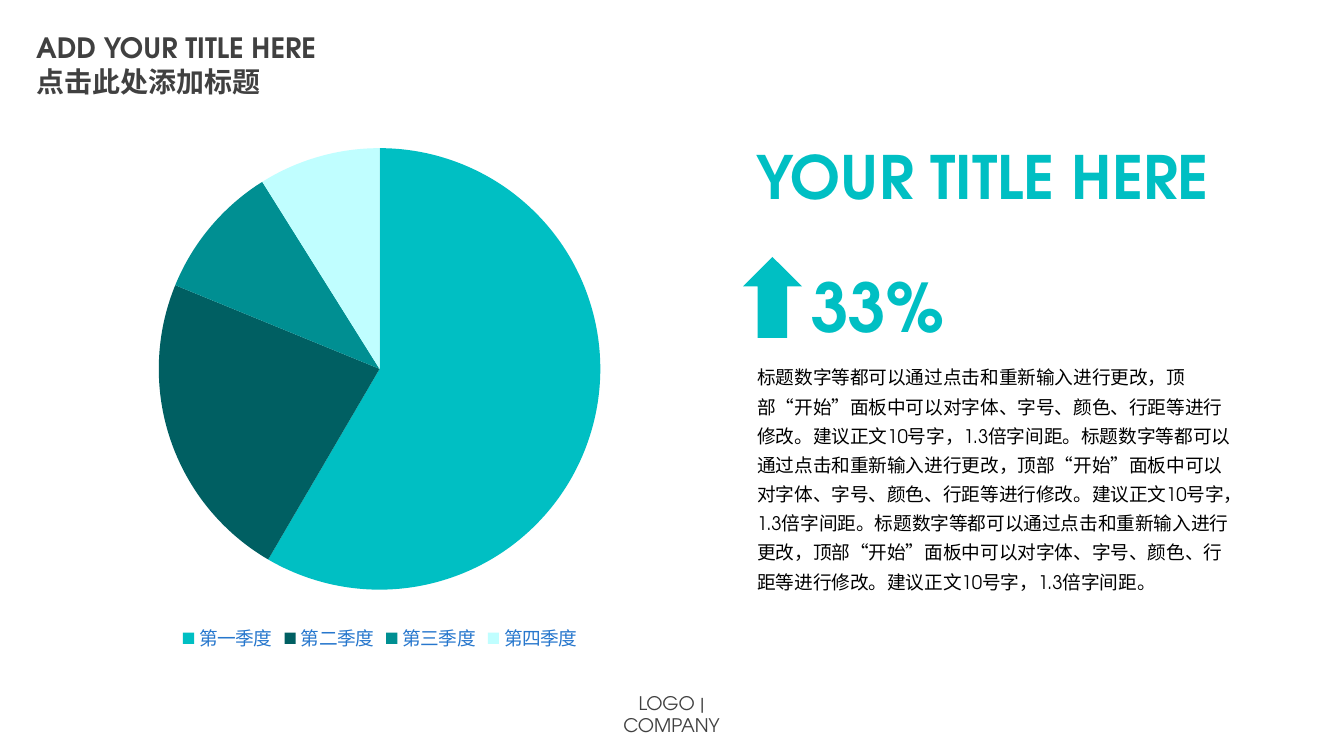
from pptx import Presentation
from pptx.chart.data import CategoryChartData
from pptx.dml.color import RGBColor
from pptx.enum.chart import XL_CHART_TYPE as Chart, XL_LEGEND_POSITION as Legend
from pptx.enum.shapes import MSO_SHAPE as Shape
from pptx.enum.text import MSO_AUTO_SIZE as Auto, PP_ALIGN as Align
from pptx.oxml import parse_xml
from pptx.oxml.ns import nsdecls, qn
from pptx.util import Pt

PX = 914400 / 134.4
LATIN, HAN = "TeX Gyre Adventor", "Noto Sans CJK SC"
TEAL = RGBColor(0x00, 0xBF, 0xC3)
DEEP = RGBColor(0x00, 0x5F, 0x62)
MID = RGBColor(0x00, 0x8F, 0x92)
PALE = RGBColor(0xC0, 0xFE, 0xFF)
GREY = RGBColor(0x40, 0x40, 0x40)
BLACK = RGBColor(0x00, 0x00, 0x00)
NAVY = RGBColor(0x10, 0x31, 0x54)
BLUE = RGBColor(0x27, 0x77, 0xCD)

# Content
ADVICE = ("标题数字等都可以通过点击和重新输入进行更改，"
          "顶部“开始”面板中可以对字体、字号、颜色、行距等进行修改。"
          "建议正文10号字，1.3倍字间距。")
QUARTERS = [("第一季度", 59, TEAL), ("第二季度", 23, DEEP),
            ("第三季度", 10, MID), ("第四季度", 9, PALE)]
# text, box in px, size, colour, bold, line spacing, alignment, wrap
TEXTS = [
    ("ADD YOUR TITLE HERE\n点击此处添加标题", (23, 24, 316, 114),
     15, GREY, True, None, Align.LEFT, True),
    ("LOGO | COMPANY", (577, 685, 189, 36),
     10, GREY, False, None, Align.CENTER, True),
    ("YOUR TITLE HERE", (743, 153, 564, 63),
     32, TEAL, True, 0.7, Align.LEFT, True),
    ("33%", (798, 259, 161, 94), 36, TEAL, True, None, Align.LEFT, False),
    (ADVICE * 3, (744, 353, 503, 246),
     10, BLACK, False, 1.3, Align.LEFT, True),
]
ARROW = (743, 257, 59, 81)
CHART = (-15, 130, 790, 527)
PIE = (159, 148, 442, 442)


def emu(*box):
    return [round(n * PX) for n in box]


def add_text(slide, text, box, size, color, bold, gap, align, wrap):
    frame = slide.shapes.add_textbox(*emu(*box)).text_frame
    frame.text = text
    frame.word_wrap = wrap
    frame.auto_size = Auto.SHAPE_TO_FIT_TEXT
    for para in frame.paragraphs:
        para.alignment = align
        if gap:
            para.line_spacing = gap
        for run in para.runs:
            font = run.font
            font.name, font.size, font.bold = LATIN, Pt(size), bold
            font.color.rgb = color
            run._r.rPr.append(parse_xml(
                f'<a:ea {nsdecls("a")} typeface="{HAN}"/>'))


def set_font(font, name, color):
    font.name, font.size = name, Pt(10)
    font.color.rgb = color


def add_pie(slide):
    data = CategoryChartData()
    data.categories = [name for name, _, _ in QUARTERS]
    data.add_series("Series 1", [num for _, num, _ in QUARTERS])
    chart = slide.shapes.add_chart(Chart.PIE, *emu(*CHART), data).chart
    chart.has_title = False
    set_font(chart.font, LATIN, NAVY)
    chart.has_legend = True
    chart.legend.position = Legend.BOTTOM
    chart.legend.include_in_layout = False
    set_font(chart.legend.font, HAN, BLUE)
    plot = chart.plots[0]
    plot.vary_by_categories = True
    for i, (_, _, color) in enumerate(QUARTERS):
        look = plot.series[0].points[i].format
        look.fill.solid()
        look.fill.fore_color.rgb = color
        look.line.fill.background()

    # Fixed place of the pie inside the chart
    left, top, wide, high = CHART
    x, y, w, h = PIE
    parts = {"x": (x - left) / wide, "y": (y - top) / high,
             "w": w / wide, "h": h / high}
    area = chart._chartSpace.chart.plotArea
    for old in area.findall(qn("c:layout")):
        area.remove(old)
    rows = "".join(f'<c:{k} val="{v:.3f}"/>' for k, v in parts.items())
    area.insert(0, parse_xml(
        f'<c:layout {nsdecls("c")}><c:manualLayout>'
        '<c:layoutTarget val="inner"/>'
        '<c:xMode val="edge"/><c:yMode val="edge"/>'
        f'{rows}</c:manualLayout></c:layout>'))


def main():
    deck = Presentation()
    deck.slide_width, deck.slide_height = emu(1344, 756)
    slide = deck.slides.add_slide(deck.slide_layouts[6])

    add_pie(slide)
    for item in TEXTS:
        add_text(slide, *item)

    # Growth arrow
    arrow = slide.shapes.add_shape(Shape.UP_ARROW, *emu(*ARROW))
    arrow.shadow.inherit = False
    arrow.fill.solid()
    arrow.fill.fore_color.rgb = TEAL
    arrow.line.fill.background()

    deck.save("out.pptx")


if __name__ == "__main__":
    main()
